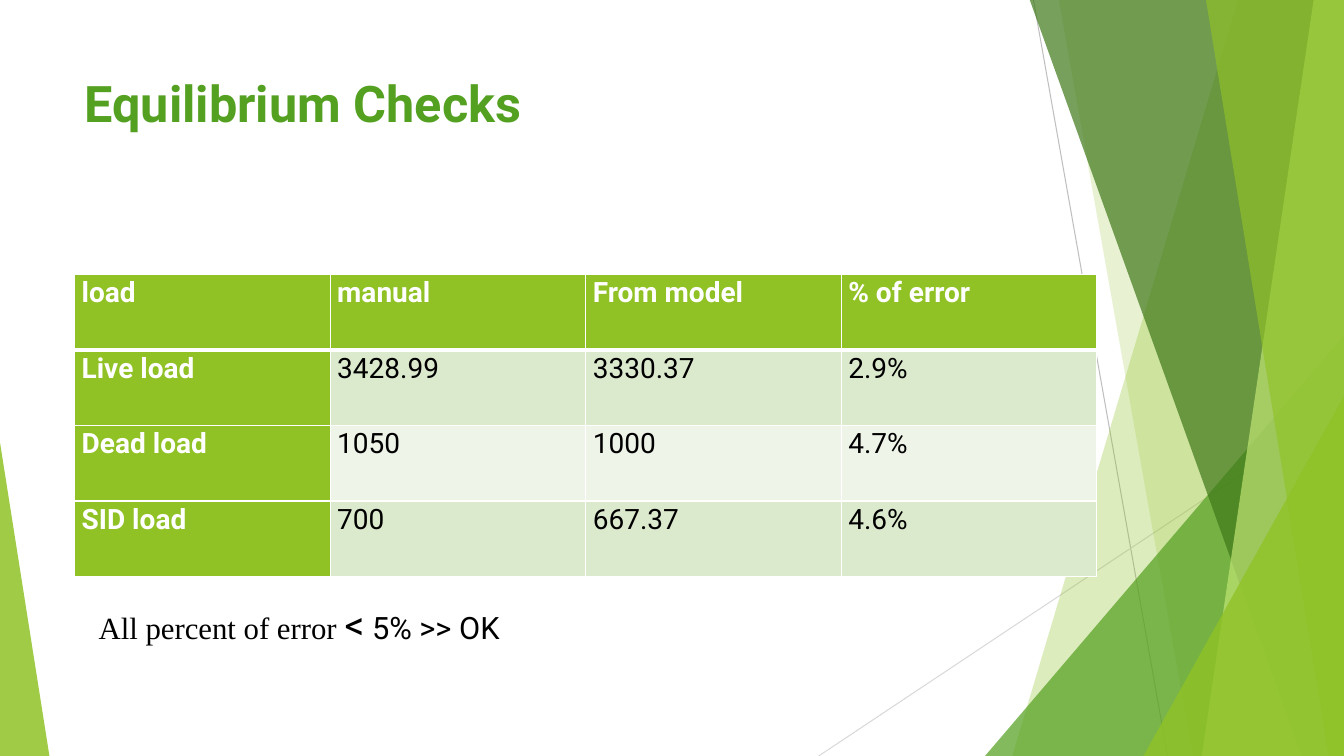
from lxml import etree
from pptx import Presentation
from pptx.dml.color import RGBColor
from pptx.enum.shapes import MSO_CONNECTOR, MSO_SHAPE
from pptx.enum.text import MSO_ANCHOR
from pptx.oxml.ns import qn
from pptx.util import Inches, Pt

STRAIGHT = MSO_CONNECTOR.STRAIGHT
TRIANGLE = MSO_SHAPE.ISOSCELES_TRIANGLE
TOP = MSO_ANCHOR.TOP

WIDTH, HEIGHT = 13.33, 7.5
THEME = {
    "green": "90C226", "leaf": "54A021", "forest": "3F7819", "lime": "C0E474",
    "band": "DBE9CD", "pale": "EEF4E8", "white": "FFFFFF", "black": "000000",
    "gray": "BFBFBF", "light_gray": "D9D9D9",
    "font": "Roboto", "serif": "Times New Roman",
    "title": 36, "cell": 20, "note": 22, "sign": 28,
}

TITLE = "Equilibrium Checks"
ROWS = [
    ("load", "manual", "From model", "% of error"),
    ("Live load", "3428.99", "3330.37", "2.9%"),
    ("Dead load", "1050", "1000", "4.7%"),
    ("SID load", "700", "667.37", "4.6%"),
]
NOTE = [
    ("All percent of error ", "serif", "note"),
    ("<", "font", "sign"),
    (" 5% >> OK", "font", "note"),
]
RAYS = [
    ((10.25, 0), (11.58, HEIGHT), "gray"),
    ((WIDTH, 4.03), (8.12, HEIGHT), "light_gray"),
]
FACETS = [
    ("strip", 12.28, 10.04, "green", 30),
    ("strip", 10.5, 11.83, "green", 20),
    ("corner", 9.77, 3.33, 3.56, 1, "leaf", 72),
    ("strip", 10.21, 12.91, "forest", 70),
    ("strip", 13.03, 11.92, "lime", 70),
    ("strip", 11.96, 13.18, "green", 65),
    ("corner", 11.34, 3.93, 1.99, 1, "green", 80),
    ("corner", 0, 4.39, 0.49, 0, "green", 85),
]


def color(name):
    return RGBColor.from_string(THEME[name])


def add_ray(page, start, end, tint):
    ray = page.shapes.add_connector(STRAIGHT, *map(Inches, start + end))
    ray.line.color.rgb = color(tint)
    ray.line.width = Pt(0.75)
    etree.SubElement(ray._element.spPr, qn("a:effectLst"))


def add_strip(page, top_x, bottom_x):
    builder = page.shapes.build_freeform(Inches(top_x), Inches(-0.01))
    corners = [(WIDTH, -0.01), (WIDTH, HEIGHT), (bottom_x, HEIGHT)]
    builder.add_line_segments([(Inches(x), Inches(y)) for x, y in corners])
    return builder.convert_to_shape()


def add_corner(page, left, top, width, apex):
    corner = page.shapes.add_shape(
        TRIANGLE, Inches(left), Inches(top), Inches(width), Inches(HEIGHT - top))
    corner.adjustments[0] = apex
    return corner


def paint(shape, tint, opacity):
    shape.shadow.inherit = False
    shape.line.fill.background()
    shape.fill.solid()
    shape.fill.fore_color.rgb = color(tint)
    tone = shape._element.spPr.find(qn("a:solidFill"))[0]
    etree.SubElement(tone, qn("a:alpha"), val=str(opacity * 1000))


def add_span(para, text, size, tint="black", font="font", bold=False):
    span = para.add_run()
    span.text = text
    span.font.name = THEME[font]
    span.font.size = Pt(THEME[size])
    span.font.color.rgb = color(tint)
    span.font.bold = bold


def add_box(page, left, top, width, height):
    box = page.shapes.add_textbox(*map(Inches, (left, top, width, height)))
    box.text_frame.word_wrap = True
    box.text_frame.vertical_anchor = TOP
    return box.text_frame.paragraphs[0]


def set_borders(cell, widths):
    properties = cell._tc.get_or_add_tcPr()
    for index, (side, width) in enumerate(zip(("lnL", "lnR", "lnT", "lnB"), widths)):
        border = etree.Element(qn("a:" + side), w=str(Pt(width)))
        fill = etree.SubElement(border, qn("a:solidFill"))
        etree.SubElement(fill, qn("a:srgbClr"), val=THEME["white"])
        properties.insert(index, border)


def add_load_table(page, left, top, column_width, row_height):
    row_count, column_count = len(ROWS), len(ROWS[0])
    table = page.shapes.add_table(
        row_count, column_count, Inches(left), Inches(top),
        Inches(column_width * column_count), Inches(row_height * row_count)).table
    for column in table.columns:
        column.width = Inches(column_width)
    for r, values in enumerate(ROWS):
        table.rows[r].height = Inches(row_height)
        for c, value in enumerate(values):
            heading = r == 0 or c == 0
            cell = table.cell(r, c)
            cell.margin_left = cell.margin_right = Inches(0.07)
            cell.margin_top = cell.margin_bottom = 0
            cell.fill.solid()
            cell.fill.fore_color.rgb = color(
                "green" if heading else "band" if r % 2 else "pale")
            set_borders(cell, (1, 1, 3 if r == 1 else 1, 3 if r == 0 else 1))
            para = cell.text_frame.paragraphs[0]
            para.line_spacing = 1.07
            add_span(para, value, "cell", "white" if heading else "black", bold=heading)


def main():
    deck = Presentation()
    deck.slide_width, deck.slide_height = Inches(WIDTH), Inches(HEIGHT)
    page = deck.slides.add_slide(deck.slide_layouts[6])
    for start, end, tint in RAYS:
        add_ray(page, start, end, tint)
    makers = {"strip": add_strip, "corner": add_corner}
    for kind, *places, tint, opacity in FACETS:
        paint(makers[kind](page, *places), tint, opacity)
    add_span(add_box(page, 0.74, 0.67, 9.4, 0.85), TITLE, "title", "leaf", bold=True)
    add_load_table(page, 0.74, 2.72, 2.535, 0.75)
    note = add_box(page, 0.88, 5.91, 6.67, 1.18)
    for text, font, size in NOTE:
        add_span(note, text, size, font=font)
    deck.save("out.pptx")


if __name__ == "__main__":
    main()
